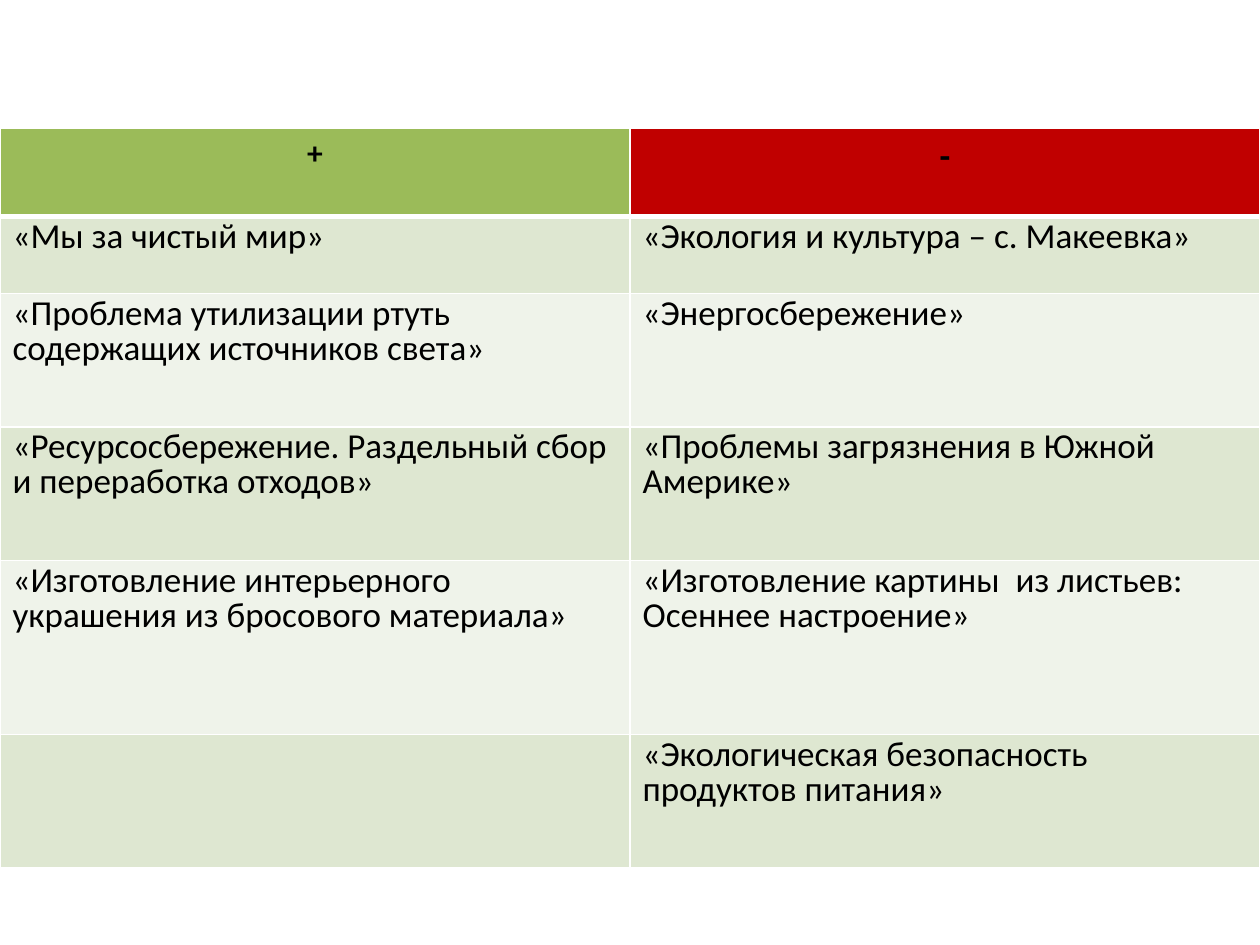
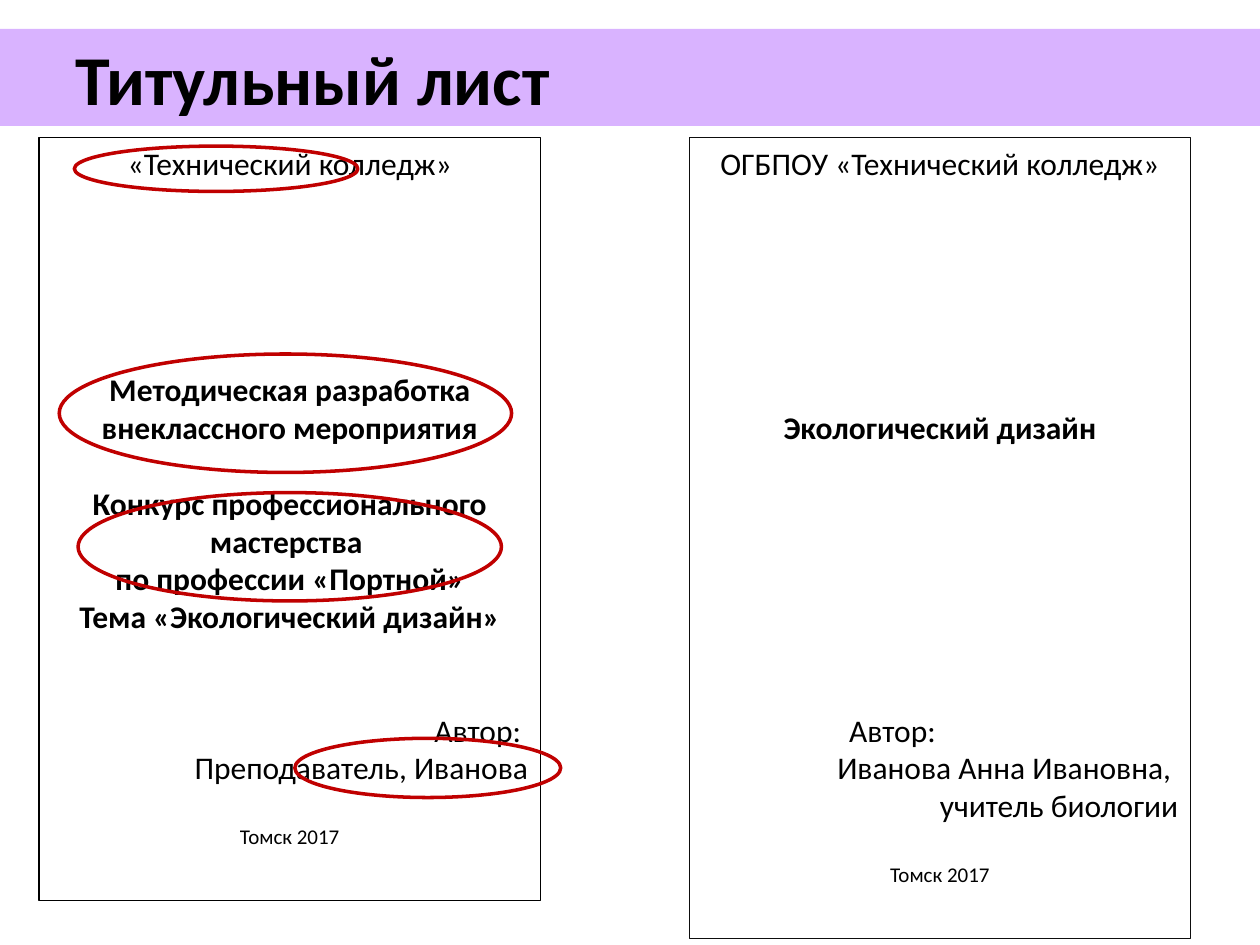
from dataclasses import dataclass

from lxml import etree
from pptx import Presentation
from pptx.dml.color import RGBColor
from pptx.enum.shapes import MSO_SHAPE
from pptx.enum.text import MSO_ANCHOR, MSO_AUTO_SIZE, PP_ALIGN
from pptx.oxml.ns import qn
from pptx.util import Emu, Pt

RECT, OVAL = MSO_SHAPE.RECTANGLE, MSO_SHAPE.OVAL
LEFT, MID, RIGHT = PP_ALIGN.LEFT, PP_ALIGN.CENTER, PP_ALIGN.RIGHT
TOP = MSO_ANCHOR.TOP
FIXED = MSO_AUTO_SIZE.NONE

SCALE = 9144
FONT = "Calibri"
BLACK, WHITE, RED = "000000", "FFFFFF", "C00000"
GREEN, LILAC = "9BBB59", "D9B3FF"
BANDS = ("DEE7D1", "EFF3EA")
PITCH = 21.6


@dataclass(frozen=True)
class Box:
    x: int
    y: int
    w: int
    h: int


@dataclass(frozen=True)
class Line:
    text: str
    gap: int = 0
    align: int = MID
    bold: bool = False
    size: int = 18
    indent: int = 0


@dataclass(frozen=True)
class Sheet:
    box: Box
    edge: str
    lines: tuple[Line, ...]


HEADS = (("+", 18, GREEN), ("-", 20, RED))
ROWS = (
    ("«Мы за чистый мир»", "«Экология и культура – с. Макеевка»"),
    ("«Проблема утилизации ртуть содержащих источников света»",
     "«Энергосбережение»"),
    ("«Ресурсосбережение. Раздельный сбор и переработка отходов»",
     "«Проблемы загрязнения в Южной Америке»"),
    ("«Изготовление интерьерного украшения из бросового материала»",
     "«Изготовление картины  из листьев: Осеннее настроение»"),
    ("", "«Экологическая безопасность продуктов питания»"),
)
HEIGHTS = (70, 61, 106, 106, 138, 106)

SHEETS = (
    Sheet(Box(31, 109, 398, 606), BLACK, (
        Line("«Технический колледж»"),
        Line("Методическая разработка", gap=5, bold=True),
        Line("внеклассного мероприятия", bold=True),
        Line("Конкурс профессионального мастерства ", gap=1, bold=True),
        Line("по профессии «Портной»", bold=True),
        Line("Тема «Экологический дизайн»", bold=True),
        Line("Автор: ", gap=2, align=RIGHT),
        Line("Преподаватель, Иванова", align=RIGHT),
        Line("Томск 2017", gap=1, size=12),
    )),
    Sheet(Box(547, 109, 398, 636), "0D0D0D", (
        Line("ОГБПОУ «Технический колледж»"),
        Line("Экологический дизайн", gap=6, bold=True),
        Line("Автор:", gap=7, align=LEFT, indent=117),
        Line("Иванова Анна Ивановна, ", align=RIGHT),
        Line("учитель биологии", align=RIGHT),
        Line("Томск 2017", gap=1, size=12),
    )),
)
RINGS = (Box(47, 281, 359, 94), Box(62, 391, 336, 86),
         Box(234, 586, 211, 47), Box(59, 116, 225, 36))


def px(n: int) -> Emu:
    return Emu(n * SCALE)


def tint(code: str) -> RGBColor:
    return RGBColor.from_string(code)


def paint(fill, code: str) -> None:
    fill.solid()
    fill.fore_color.rgb = tint(code)


def style(para, size: int, bold: bool = False, align: int = LEFT) -> None:
    para.alignment = align
    font = para.font
    font.name, font.size, font.bold = FONT, Pt(size), bold
    font.color.rgb = tint(BLACK)


def frame(cell, base: int) -> None:
    props = cell._tc.get_or_add_tcPr()
    for side, width in (("L", 1), ("R", 1), ("T", 1), ("B", base)):
        edge = etree.SubElement(props, qn(f"a:ln{side}"), w=str(Pt(width)))
        fill = etree.SubElement(edge, qn("a:solidFill"))
        etree.SubElement(fill, qn("a:srgbClr"), val=WHITE)


def draw_grid(slide) -> None:
    shape = slide.shapes.add_table(len(HEIGHTS), len(HEADS), px(0), px(102),
                                   px(1000), px(sum(HEIGHTS)))
    grid = shape.table
    for row, height in zip(grid.rows, HEIGHTS):
        row.height = px(height)
    for col, (text, size, code) in enumerate(HEADS):
        cell = grid.cell(0, col)
        frame(cell, 3)
        paint(cell.fill, code)
        cell.text = text
        style(cell.text_frame.paragraphs[0], size, True, MID)
    for num, row in enumerate(ROWS):
        for col, text in enumerate(row):
            cell = grid.cell(num + 1, col)
            frame(cell, 1)
            paint(cell.fill, BANDS[num % 2])
            cell.text = text
            para = cell.text_frame.paragraphs[0]
            style(para, 20)
            para.line_spacing = Pt(20)


def draw_title(slide, text: str) -> None:
    title = slide.shapes.title
    title.left, title.top, title.width, title.height = map(
        px, (0, 23, 1000, 77))
    paint(title.fill, LILAC)
    body = title.text_frame
    body.text = text
    body.auto_size = FIXED
    body.vertical_anchor = TOP
    body.margin_left = px(60)
    style(body.paragraphs[0], 40, True)


def add_shape(slide, kind: int, box: Box, edge: str, width: float):
    shape = slide.shapes.add_shape(kind, px(box.x), px(box.y),
                                   px(box.w), px(box.h))
    shape.shadow.inherit = False
    shape.fill.background()
    shape.line.color.rgb = tint(edge)
    shape.line.width = Pt(width)
    return shape


def draw_sheet(slide, sheet: Sheet) -> None:
    body = add_shape(slide, RECT, sheet.box, sheet.edge, 0.75).text_frame
    body.word_wrap = True
    body.vertical_anchor = TOP
    for num, line in enumerate(sheet.lines):
        para = body.add_paragraph() if num else body.paragraphs[0]
        para.text = line.text
        if line.indent:
            para._p.get_or_add_pPr().set("marL", str(px(line.indent)))
        if line.gap:
            para.space_before = Pt(line.gap * PITCH)
        style(para, line.size, line.bold, line.align)


def main() -> None:
    deck = Presentation()
    deck.slide_width, deck.slide_height = px(1000), px(750)
    draw_grid(deck.slides.add_slide(deck.slide_layouts[6]))
    cover = deck.slides.add_slide(deck.slide_layouts[5])
    draw_title(cover, "Титульный лист")
    for sheet in SHEETS:
        draw_sheet(cover, sheet)
    for ring in RINGS:
        add_shape(cover, OVAL, ring, RED, 2)
    deck.save("out.pptx")


if __name__ == "__main__":
    main()
